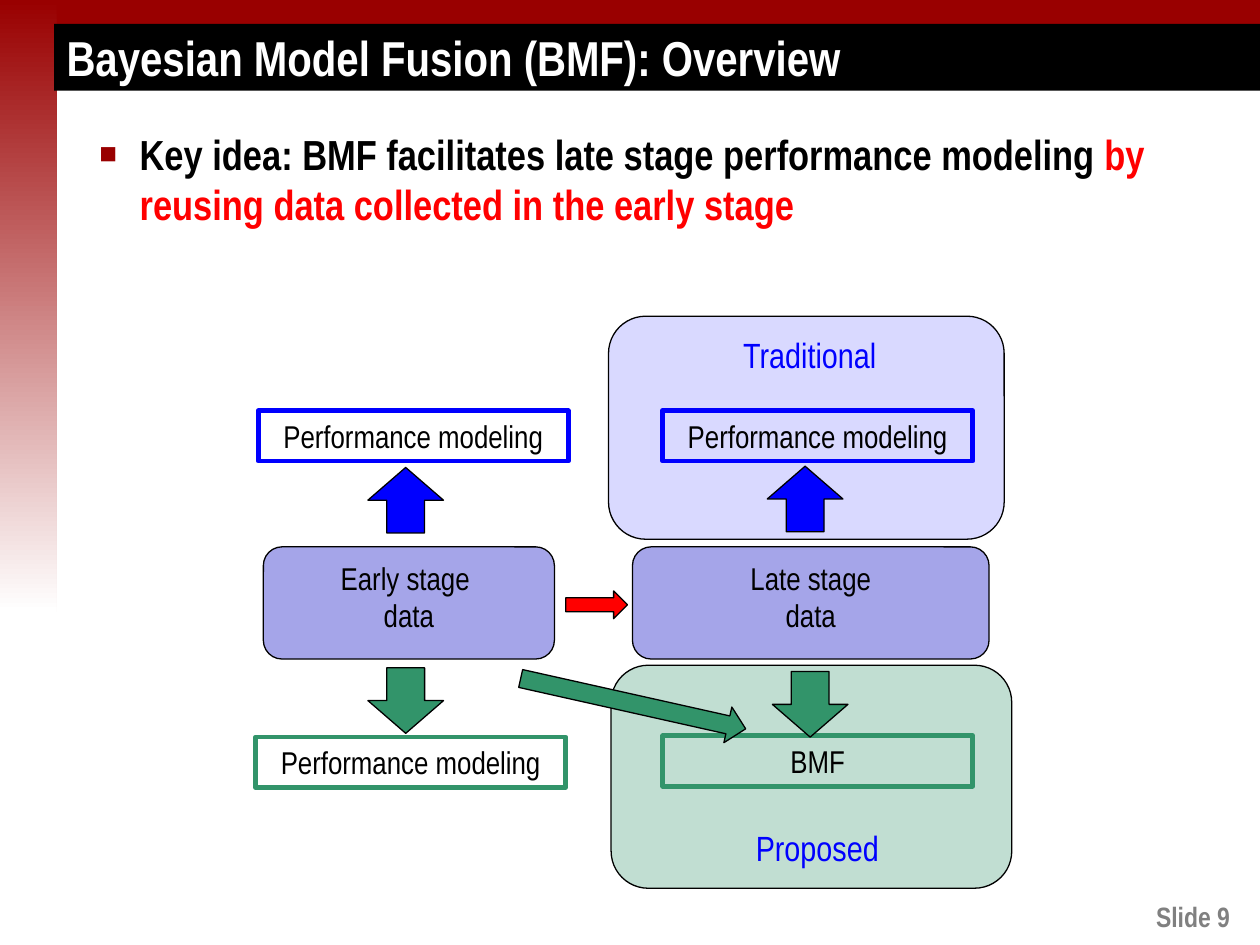
from dataclasses import dataclass
from typing import Optional

from lxml import etree
from pptx import Presentation
from pptx.dml.color import RGBColor
from pptx.enum import shapes, text
from pptx.oxml import ns
from pptx.util import Inches, Pt

FONT = "Arial Narrow"
BLACK = RGBColor(0x00, 0x00, 0x00)
WHITE = RGBColor(0xFF, 0xFF, 0xFF)
GREY = RGBColor(0x80, 0x80, 0x80)
DARK_RED = RGBColor(0x99, 0x00, 0x00)
RED = RGBColor(0xFF, 0x00, 0x00)
BLUE = RGBColor(0x00, 0x00, 0xFF)
GREEN = RGBColor(0x32, 0x94, 0x6A)
LAVENDER = RGBColor(0xA5, 0xA5, 0xE9)

KIND = shapes.MSO_SHAPE
LEFT, CENTER, RIGHT = text.PP_ALIGN.LEFT, text.PP_ALIGN.CENTER, text.PP_ALIGN.RIGHT


@dataclass
class Box:
    """A preset shape, with lengths in inches."""
    left: float
    top: float
    width: float
    height: float
    kind: KIND = KIND.RECTANGLE
    fill: Optional[RGBColor] = None
    opacity: int = 100
    line: Optional[RGBColor] = BLACK
    line_width: float = 0.75
    rotation: float = 0
    label: str = ""


@dataclass
class Caption:
    """Free text, with lengths in inches."""
    left: float
    top: float
    width: float
    height: float
    label: str
    size: int
    color: RGBColor
    bold: bool = False
    align: text.PP_ALIGN = LEFT
    wrap: bool = True


def style_text(frame, size: int, color: RGBColor, bold: bool, align) -> None:
    for paragraph in frame.paragraphs:
        paragraph.alignment = align
        for run in paragraph.runs:
            run.font.name = FONT
            run.font.size = Pt(size)
            run.font.bold = bold
            run.font.color.rgb = color


def set_opacity(shape, percent: int) -> None:
    color = shape._element.spPr.find(ns.qn("a:solidFill"))[0]
    etree.SubElement(color, ns.qn("a:alpha"), val=str(percent * 1000))


def draw_box(slide, box: Box):
    shape = slide.shapes.add_shape(box.kind, Inches(box.left), Inches(box.top),
                                   Inches(box.width), Inches(box.height))
    shape.shadow.inherit = False
    shape.rotation = box.rotation
    if box.fill is None:
        shape.fill.background()
    else:
        shape.fill.solid()
        shape.fill.fore_color.rgb = box.fill
        if box.opacity < 100:
            set_opacity(shape, box.opacity)
    if box.line is None:
        shape.line.fill.background()
    else:
        shape.line.color.rgb = box.line
        shape.line.width = Pt(box.line_width)
    if box.label:
        frame = shape.text_frame
        frame.text = box.label
        frame.vertical_anchor = text.MSO_ANCHOR.TOP
        style_text(frame, 18, BLACK, False, CENTER)
    return shape


def draw_caption(slide, caption: Caption):
    shape = slide.shapes.add_textbox(Inches(caption.left), Inches(caption.top),
                                     Inches(caption.width), Inches(caption.height))
    frame = shape.text_frame
    frame.word_wrap = caption.wrap
    frame.text = caption.label
    style_text(frame, caption.size, caption.color, caption.bold, caption.align)
    return shape


def add_square_bullet(paragraph, indent: float) -> None:
    props = paragraph._p.get_or_add_pPr()
    props.set("marL", str(Inches(indent)))
    props.set("indent", str(-Inches(indent)))
    color = etree.SubElement(props, ns.qn("a:buClr"))
    etree.SubElement(color, ns.qn("a:srgbClr"), val=str(DARK_RED))
    etree.SubElement(props, ns.qn("a:buSzPct"), val="70000")
    etree.SubElement(props, ns.qn("a:buFont"), typeface="Arial")
    etree.SubElement(props, ns.qn("a:buChar"), char="■")


def panel(left: float, top: float, width: float, fill: RGBColor, opacity: int) -> Box:
    return Box(left, top, width, 1.77, KIND.ROUNDED_RECTANGLE, fill, opacity)


def data_block(left: float, width: float, label: str) -> Box:
    return Box(left, 4.34, width, 0.89, KIND.ROUNDED_RECTANGLE, LAVENDER, label=label)


def step_frame(left: float, top: float, color: RGBColor, label: str) -> Box:
    return Box(left, top, 2.46, 0.4, line=color, line_width=2.75, label=label)


def block_arrow(left: float, top: float, color: RGBColor, rotation: float = 0,
                width: float = 0.6, height: float = 0.52) -> Box:
    return Box(left, top, width, height, KIND.UP_ARROW, color, rotation=rotation)


def main() -> None:
    prs = Presentation()
    prs.slide_width, prs.slide_height = Inches(10), Inches(7.5)
    slide = prs.slides.add_slide(prs.slide_layouts[6])

    # Page frame: top band, fading side band, page number
    draw_box(slide, Box(0, 0, 10, 0.25, fill=DARK_RED, line=None))
    side_band = draw_box(slide, Box(0, 0, 0.45, 4.86, line=None))
    side_band.fill.gradient()
    side_band.fill.gradient_angle = 270
    for stop, color in zip(side_band.fill.gradient_stops, (DARK_RED, WHITE)):
        stop.color.rgb = color
    draw_caption(slide, Caption(0.7, 7.09, 9.16, 0.37, "Slide 9", 16, GREY, True, RIGHT))

    # Title bar
    draw_box(slide, Box(0.43, 0.19, 9.57, 0.53, fill=BLACK, line=None))
    title = draw_caption(slide, Caption(0.43, 0.19, 9.57, 0.53,
                                        "Bayesian Model Fusion (BMF): Overview",
                                        28, WHITE, True))
    title.text_frame.vertical_anchor = text.MSO_ANCHOR.MIDDLE

    # Key idea
    key_idea = draw_caption(slide, Caption(
        0.69, 0.97, 8.64, 1.22,
        "Key idea: BMF facilitates late stage performance modeling ", 24, BLACK, True))
    sentence = key_idea.text_frame.paragraphs[0]
    sentence.add_run().text = "by reusing data collected in the early stage"
    style_text(key_idea.text_frame, 24, BLACK, True, LEFT)
    sentence.runs[1].font.color.rgb = RED
    sentence.space_before = Pt(5)
    add_square_bullet(sentence, 0.32)

    # Flow diagram, from back to front
    modeling = "Performance modeling"
    diagram = [
        panel(4.85, 5.28, 3.18, GREEN, 30),
        panel(4.83, 2.51, 3.14, BLUE, 15),
        data_block(2.09, 2.31, "Early stage \ndata"),
        data_block(5.02, 2.83, "Late stage\ndata"),
        Box(4.49, 4.69, 0.49, 0.22, KIND.RIGHT_ARROW, RED),
        block_arrow(2.92, 3.71, BLUE),
        block_arrow(6.09, 3.7, BLUE),
        step_frame(5.26, 3.26, BLUE, modeling),
        step_frame(2.05, 3.26, BLUE, modeling),
        block_arrow(2.92, 5.3, GREEN, 180),
        step_frame(5.26, 5.84, GREEN, "BMF"),
        step_frame(2.03, 5.85, GREEN, modeling),
        block_arrow(4.88, 4.67, GREEN, 102.6, 0.29, 1.83),
        block_arrow(6.13, 5.33, GREEN, 180),
    ]
    for box in diagram:
        draw_box(slide, box)

    # Panel names
    draw_caption(slide, Caption(5.8, 2.6, 1.27, 0.44, "Traditional", 20, BLUE, wrap=False))
    draw_caption(slide, Caption(5.9, 6.51, 1.19, 0.44, "Proposed", 20, BLUE, wrap=False))

    prs.save("out.pptx")


if __name__ == "__main__":
    main()
